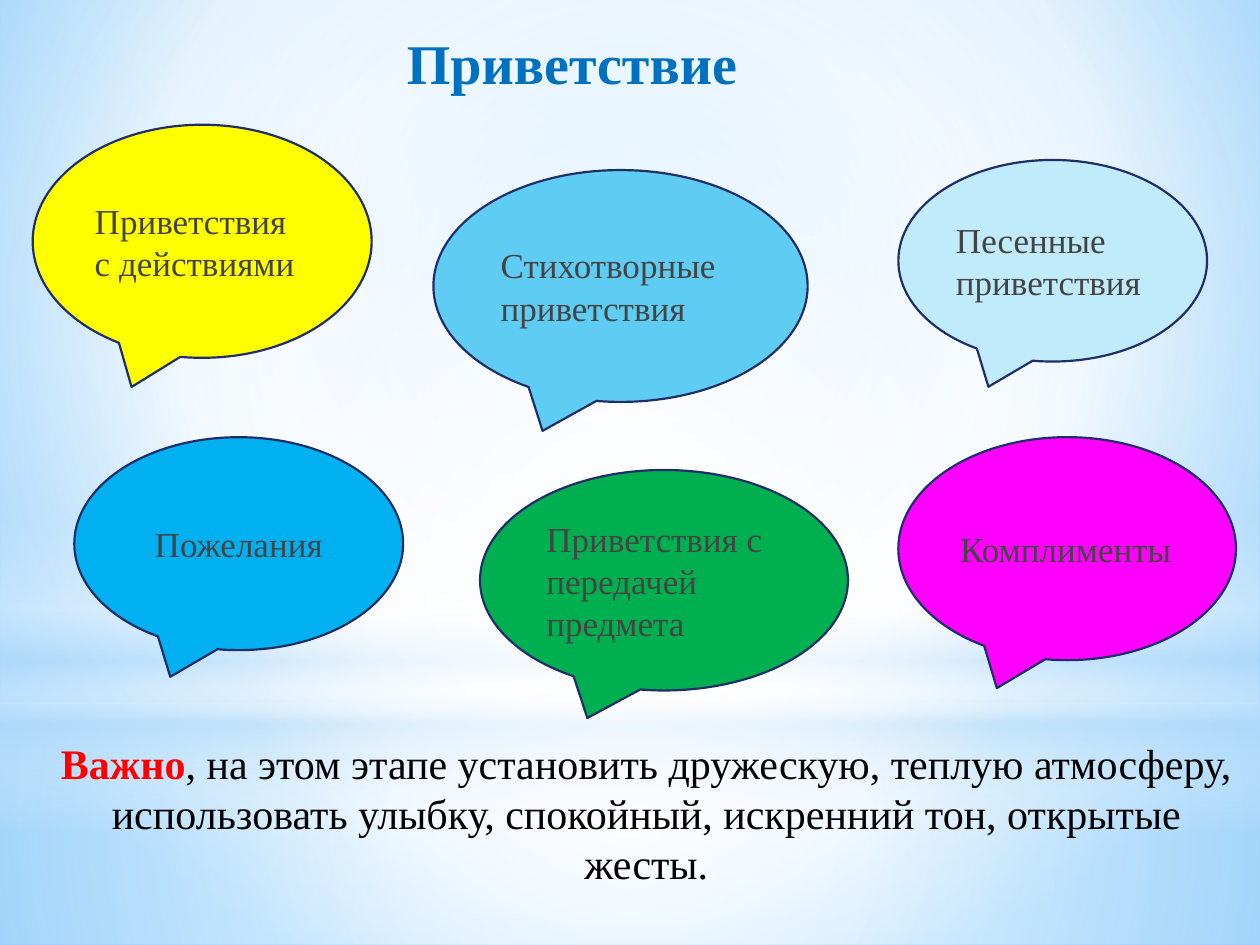
from lxml import etree
from pptx import Presentation
from pptx.dml.color import RGBColor
from pptx.enum.shapes import MSO_SHAPE
from pptx.enum.text import MSO_ANCHOR, PP_ALIGN
from pptx.oxml.ns import qn
from pptx.util import Inches, Pt

RECT, OVAL = MSO_SHAPE.RECTANGLE, MSO_SHAPE.OVAL
CALLOUT = MSO_SHAPE.OVAL_CALLOUT
LEFT, CENTER = PP_ALIGN.LEFT, PP_ALIGN.CENTER
MIDDLE, BOTTOM, TOP = MSO_ANCHOR.MIDDLE, MSO_ANCHOR.BOTTOM, MSO_ANCHOR.TOP

COLORS = {
    "white": "FFFFFF", "haze": "B4DCFA", "sky": "9ED5FF", "edge": "5BB9FF",
    "outline": "1F2E69", "label": "444444", "title": "0070C0",
    "warning": "FF0000", "body": "000000",
    "yellow": "FFFF00", "green": "00B050", "azure": "5ECCF3",
    "pale": "BFEBFA", "blue": "00B0F0", "magenta": "FF00FF",
}


def gradient(stops, center=None):
    """Gradient of (position, colour, opacity); vertical without a center."""
    fill = etree.Element(qn("a:gradFill"), rotWithShape="1")
    stop_list = etree.SubElement(fill, qn("a:gsLst"))
    for position, color, opacity in stops:
        stop = etree.SubElement(stop_list, qn("a:gs"), pos=str(position * 1000))
        rgb = etree.SubElement(stop, qn("a:srgbClr"), val=COLORS[color])
        if opacity < 100:
            etree.SubElement(rgb, qn("a:alpha"), val=str(opacity * 1000))
    if center:
        radial = etree.SubElement(fill, qn("a:path"), {"path": "circle"})
        sides = {side: str(inset * 1000) for side, inset in zip("ltrb", center)}
        etree.SubElement(radial, qn("a:fillToRect"), sides)
    else:
        etree.SubElement(fill, qn("a:lin"), ang="5400000", scaled="0")
    return fill


def write(frame, runs, align, anchor):
    """Fill a text frame with one paragraph of (text, size, colour, bold)."""
    frame.word_wrap = True
    frame.vertical_anchor = anchor
    paragraph = frame.paragraphs[0]
    paragraph.alignment = align
    for text, size, color, bold in runs:
        run = paragraph.add_run()
        run.text = text
        run.font.color.rgb = RGBColor.from_string(COLORS[color])
        formats = {"name": "Times New Roman", "size": Pt(size), "bold": bold}
        for attribute, value in formats.items():
            setattr(run.font, attribute, value)
    return paragraph


prs = Presentation()
prs.slide_width, prs.slide_height = Inches(10), Inches(7.5)
slide = prs.slides.add_slide(prs.slide_layouts[6])
shapes = slide.shapes

# Background
slide.background.fill.solid()
backdrop = slide.element.find(".//" + qn("p:bgPr"))
backdrop.replace(backdrop[0], gradient(
    [(0, "sky", 100), (60, "white", 100), (100, "edge", 100)], (20, 10, 20, 60)))

# Light and horizon layers
middle = (50, 50, 50, 50)
layers = [
    (RECT, 5.58, 1.92, middle,
     [(0, "white", 91), (37, "white", 76), (100, "haze", 79)]),
    (RECT, 0, 5.58, middle,
     [(0, "white", 89), (48, "white", 62), (100, "haze", 79)]),
    (RECT, 4.12, 2.5, None,
     [(0, "white", 0), (29, "white", 30), (45, "haze", 40),
      (55, "white", 26), (65, "haze", 60), (100, "white", 0)]),
    (OVAL, 1.75, 5.58, middle, [(0, "white", 100), (56, "white", 0)]),
]
for kind, top, height, center, stops in layers:
    layer = shapes.add_shape(kind, 0, Inches(top), Inches(10), Inches(height))
    layer.shadow.inherit = False
    layer.line.fill.background()
    layer.fill.solid()
    properties = layer.element.spPr
    properties.replace(properties.find(qn("a:solidFill")), gradient(stops, center))

# Kinds of greeting
greetings = [
    ("Приветствия с действиями", 0.26, 0.99, 2.69, 1.85, "yellow", LEFT),
    ("Приветствия с передачей предмета", 3.81, 3.73, 2.92, 1.75, "green", LEFT),
    ("Стихотворные приветствия", 3.44, 1.35, 2.97, 1.84, "azure", LEFT),
    ("Песенные приветствия", 7.13, 1.27, 2.45, 1.6, "pale", LEFT),
    ("Пожелания", 0.59, 3.47, 2.61, 1.69, "blue", CENTER),
    ("Комплименты", 7.13, 3.47, 2.68, 1.77, "magenta", LEFT),
]
for text, left, top, width, height, color, align in greetings:
    bubble = shapes.add_shape(
        CALLOUT, Inches(left), Inches(top), Inches(width), Inches(height))
    bubble.shadow.inherit = False
    bubble.fill.solid()
    bubble.fill.fore_color.rgb = RGBColor.from_string(COLORS[color])
    bubble.line.color.rgb = RGBColor.from_string(COLORS["outline"])
    bubble.line.width = Pt(1.25)
    write(bubble.text_frame, [(text, 20, "label", False)], align, MIDDLE)

# Advice
advice = shapes.add_textbox(Inches(0.26), Inches(5.8), Inches(9.74), Inches(1.31))
write(advice.text_frame, [
    ("Важно", 24, "warning", True),
    (", на этом этапе установить дружескую, теплую атмосферу, использовать "
     "улыбку, спокойный, искренний тон, открытые жесты.", 24, "body", False),
], CENTER, TOP)

# Title
title = shapes.add_textbox(Inches(1.25), Inches(0.29), Inches(6.58), Inches(0.52))
heading = write(title.text_frame, [("Приветствие", 32, "title", True)], CENTER, BOTTOM)
heading.space_after = Pt(3)

prs.save("out.pptx")
